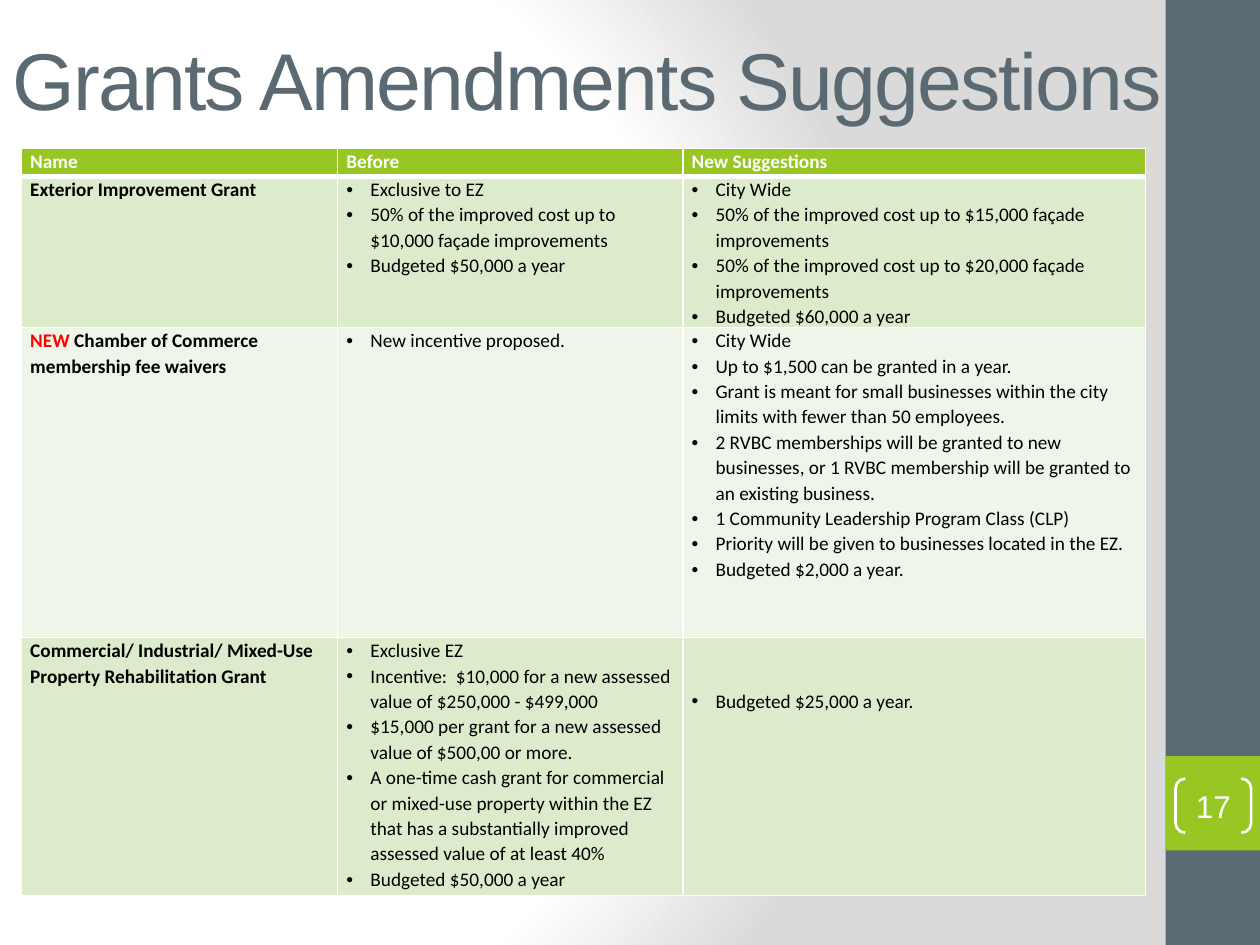
from lxml import etree
from pptx import Presentation
from pptx.dml.color import RGBColor
from pptx.enum.shapes import MSO_SHAPE
from pptx.enum.text import MSO_ANCHOR, PP_ALIGN
from pptx.oxml.ns import qn
from pptx.util import Inches, Pt

RECTANGLE = MSO_SHAPE.RECTANGLE
BRACKETS = MSO_SHAPE.DOUBLE_BRACKET
MIDDLE = MSO_ANCHOR.MIDDLE
CENTER = PP_ALIGN.CENTER

SLATE, GREEN, WHITE, BLACK, RED = "5B6973", "98C723", "FFFFFF", "000000", "FF0000"
BAND_COLORS = ["DDEBCD", "EFF5E8"]
BACKGROUND_STOPS = [(0, WHITE), (75, WHITE), (100, "DADADA")]
BACKGROUND_FOCUS = {"l": 20, "t": 50, "r": 100, "b": 50}

TITLE = "Grants Amendments Suggestions"
PAGE_NUMBER = "17"
HEADERS = ["Name", "Before", "New Suggestions"]
GRANTS = [
    {
        "name": [("Exterior Improvement Grant", BLACK)],
        "before": [
            "Exclusive to EZ",
            "50% of the improved cost up to $10,000 façade improvements",
            "Budgeted $50,000 a year",
        ],
        "after": [
            "City Wide",
            "50% of the improved cost up to $15,000 façade improvements",
            "50% of the improved cost up to $20,000 façade improvements",
            "Budgeted $60,000 a year",
        ],
    },
    {
        "name": [("NEW", RED), (" Chamber of Commerce membership fee waivers", BLACK)],
        "before": ["New incentive proposed."],
        "after": [
            "City Wide",
            "Up to $1,500 can be granted in a year.",
            "Grant is meant for small businesses within the city limits with fewer than 50 employees.",
            "2 RVBC memberships will be granted to new businesses, or 1 RVBC membership "
            "will be granted to an existing business.",
            "1 Community Leadership Program Class (CLP)",
            "Priority will be given to businesses located in the EZ.",
            "Budgeted $2,000 a year.",
        ],
    },
    {
        "name": [("Commercial/ Industrial/ Mixed-Use Property Rehabilitation Grant", BLACK)],
        "before": [
            "Exclusive EZ",
            "Incentive:  $10,000 for a new assessed value of $250,000 - $499,000",
            "$15,000 per grant for a new assessed value of $500,00 or more.",
            "A one-time cash grant for commercial or mixed-use property within the EZ "
            "that has a substantially improved assessed value of at least 40%",
            "Budgeted $50,000 a year",
        ],
        "after": ["Budgeted $25,000 a year."],
        "after_top": 0.4,
    },
]
COLUMN_WIDTHS = [2.51, 2.74, 3.67]
ROW_HEIGHTS = [0.22, 1.2, 2.46, 2.05]
TABLE_LEFT, TABLE_TOP = 0.17, 1.18
SIDEBAR_WIDTH = 0.75


def color(value):
    return RGBColor.from_string(value)


def add_element(parent, tag, **attributes):
    element = etree.SubElement(parent, qn(tag))
    for key, value in attributes.items():
        element.set(key, str(value))
    return element


def style_font(run, name, size, value, bold=False):
    run.font.name, run.font.size, run.font.bold = name, Pt(size), bold
    run.font.color.rgb = color(value)


def paint_background(slide):
    fill = slide.background.fill
    fill.gradient()
    gradient = slide.background._cSld.find(".//" + qn("a:gradFill"))
    for child in list(gradient):
        gradient.remove(child)
    stops = add_element(gradient, "a:gsLst")
    for position, value in BACKGROUND_STOPS:
        stop = add_element(stops, "a:gs", pos=position * 1000)
        add_element(stop, "a:srgbClr", val=value)
    focus = add_element(gradient, "a:path", path="circle")
    add_element(focus, "a:fillToRect", **{side: share * 1000 for side, share in BACKGROUND_FOCUS.items()})


def add_block(slide, top, height, fill):
    block = slide.shapes.add_shape(
        RECTANGLE, Inches(10 - SIDEBAR_WIDTH), Inches(top), Inches(SIDEBAR_WIDTH), Inches(height))
    block.shadow.inherit = False
    block.fill.solid()
    block.fill.fore_color.rgb = color(fill)
    block.line.fill.background()


def add_title(slide):
    box = slide.shapes.add_textbox(0, 0, Inches(9.58), Inches(1.25))
    frame = box.text_frame
    frame.word_wrap = True
    frame.vertical_anchor = MIDDLE
    frame.text = TITLE
    run = frame.paragraphs[0].runs[0]
    style_font(run, "Arial", 46, SLATE)
    run.font._element.set("spc", "-100")


def add_page_number(slide):
    brackets = slide.shapes.add_shape(BRACKETS, Inches(9.33), Inches(6.18), Inches(0.6), Inches(0.43))
    brackets.adjustments[0] = 0.18
    brackets.shadow.inherit = False
    brackets.fill.background()
    brackets.line.color.rgb = color(WHITE)
    brackets.line.width = Pt(1.5)
    frame = brackets.text_frame
    frame.margin_left = frame.margin_right = frame.margin_top = frame.margin_bottom = 0
    frame.vertical_anchor = MIDDLE
    frame.text = PAGE_NUMBER
    frame.paragraphs[0].alignment = CENTER
    style_font(frame.paragraphs[0].runs[0], "Arial", 18, WHITE)


def style_cell(cell, fill, bottom=1, top=1):
    cell.margin_left = cell.margin_right = Inches(0.07)
    cell.margin_top = cell.margin_bottom = 0
    cell.fill.solid()
    cell.fill.fore_color.rgb = color(fill)
    properties = cell._tc.get_or_add_tcPr()
    widths = [("a:lnL", 1), ("a:lnR", 1), ("a:lnT", top), ("a:lnB", bottom)]
    for index, (tag, width) in enumerate(widths):
        border = add_element(properties, tag, w=Pt(width))
        add_element(add_element(border, "a:solidFill"), "a:srgbClr", val=WHITE)
        properties.insert(index, border)


def write_name(cell, parts):
    paragraph = cell.text_frame.paragraphs[0]
    paragraph.line_spacing = 1.07
    for text, value in parts:
        run = paragraph.add_run()
        run.text = text
        style_font(run, "Calibri", 11, value, True)


def write_bullets(cell, items):
    cell.text_frame.text = "\n".join(items)
    for paragraph in cell.text_frame.paragraphs:
        paragraph.line_spacing = 1.07
        properties = paragraph._p.get_or_add_pPr()
        properties.set("marL", str(Inches(0.19)))
        properties.set("indent", str(-Inches(0.19)))
        add_element(properties, "a:buFont", typeface="Arial")
        add_element(properties, "a:buChar", char="•")
        style_font(paragraph.runs[0], "Calibri", 11, BLACK)


def add_grants_table(slide):
    table = slide.shapes.add_table(
        len(ROW_HEIGHTS), len(COLUMN_WIDTHS), Inches(TABLE_LEFT), Inches(TABLE_TOP),
        Inches(sum(COLUMN_WIDTHS)), Inches(sum(ROW_HEIGHTS))).table
    for column, width in zip(table.columns, COLUMN_WIDTHS):
        column.width = Inches(width)
    for row, height in zip(table.rows, ROW_HEIGHTS):
        row.height = Inches(height)
    for index, header in enumerate(HEADERS):
        style_cell(table.cell(0, index), GREEN, bottom=3)
        write_name(table.cell(0, index), [(header, WHITE)])
    for number, grant in enumerate(GRANTS, start=1):
        name, before, after = cells = [table.cell(number, index) for index in range(3)]
        for cell in cells:
            style_cell(cell, BAND_COLORS[(number - 1) % 2], top=3 if number == 1 else 1)
        write_name(name, grant["name"])
        write_bullets(before, grant["before"])
        write_bullets(after, grant["after"])
        after.margin_top = Inches(grant.get("after_top", 0))


presentation = Presentation()
presentation.slide_width, presentation.slide_height = Inches(10), Inches(7.5)
slide = presentation.slides.add_slide(presentation.slide_layouts[6])
paint_background(slide)
add_block(slide, 0, 7.5, SLATE)
add_block(slide, 6, SIDEBAR_WIDTH, GREEN)
add_title(slide)
add_grants_table(slide)
add_page_number(slide)
presentation.save("out.pptx")
